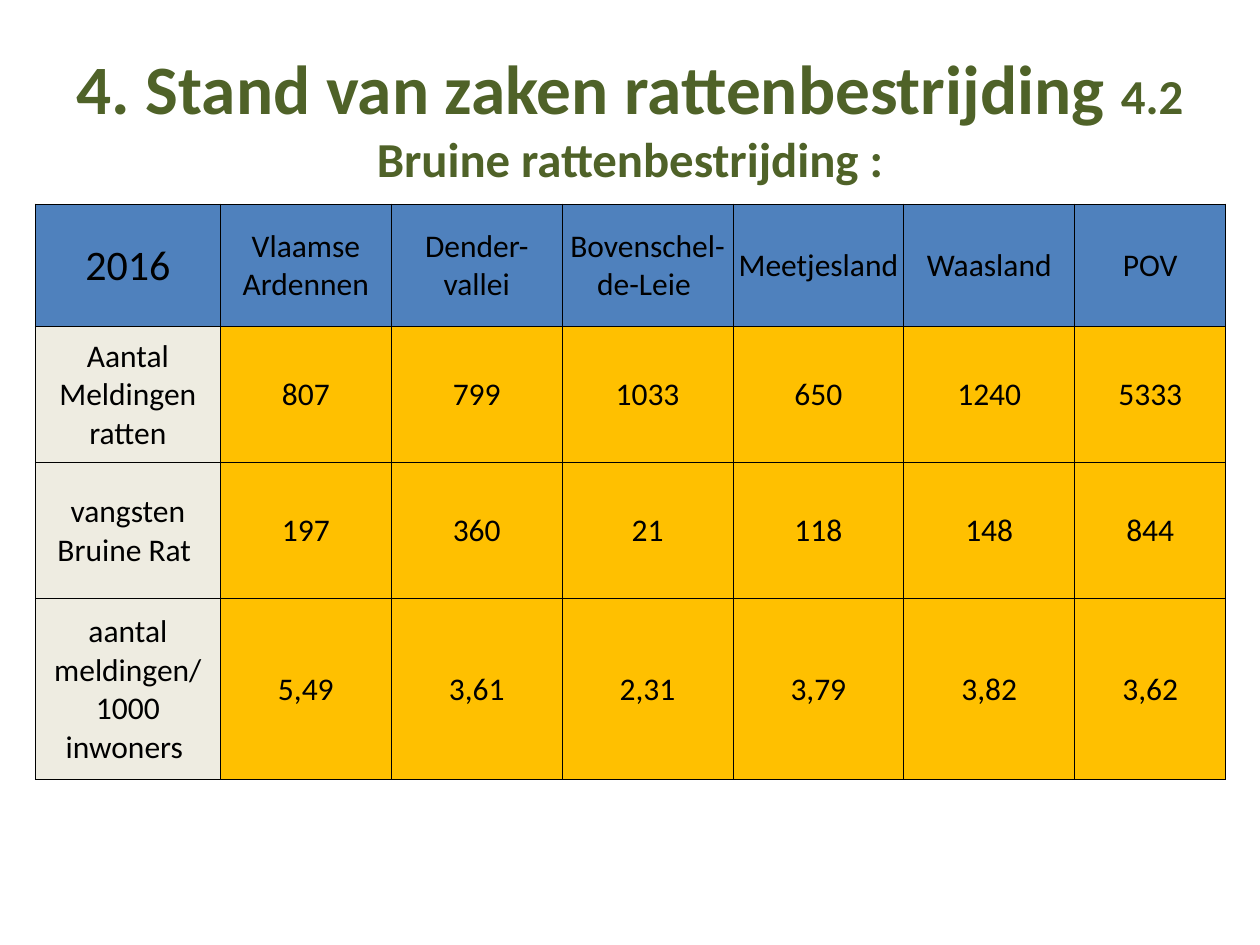
"""Build a slide with a table of the 2016 brown rat control figures."""
from pptx import Presentation
from pptx.dml.color import RGBColor
from pptx.enum.text import MSO_ANCHOR, MSO_AUTO_SIZE, PP_ALIGN
from pptx.oxml import parse_xml
from pptx.oxml.ns import nsdecls
from pptx.util import Inches, Pt

GREEN = RGBColor(0x4F, 0x62, 0x28)
BLACK = RGBColor(0, 0, 0)
BLUE = RGBColor(0x4F, 0x81, 0xBD)
CREAM = RGBColor(0xEE, 0xEC, 0xE1)
AMBER = RGBColor(0xFF, 0xC0, 0x00)

WIDTHS = [1.47] + [1.356] * 5 + [1.2]
HEIGHTS = [0.97, 1.08, 1.08, 1.44]
ROWS = [
    ["2016", "Vlaamse Ardennen", "Dender-vallei", "Bovenschel-de-Leie ",
     "Meetjesland", "Waasland", "POV"],
    ["Aantal Meldingen ratten", "807", "799", "1033", "650", "1240", "5333"],
    ["vangsten Bruine Rat ", "197", "360", "21", "118", "148", "844"],
    ["aantal meldingen/ 1000 inwoners ", "5,49", "3,61", "2,31", "3,79", "3,82", "3,62"],
]


def write(frame, text, size=18, color=BLACK, bold=False):
    para = frame.paragraphs[0]
    para.alignment = PP_ALIGN.CENTER
    run = para.add_run()
    run.text = text
    run.font.name = "Calibri"
    run.font.size = Pt(size)
    run.font.bold = bold
    run.font.color.rgb = color


def border(cell):
    props = cell._tc.get_or_add_tcPr()
    for side in ("lnL", "lnR", "lnT", "lnB"):
        props.append(parse_xml(
            f'<a:{side} {nsdecls("a")} w="{Pt(0.5)}"><a:solidFill>'
            f'<a:srgbClr val="{BLACK}"/></a:solidFill></a:{side}>'))


deck = Presentation()
deck.slide_width, deck.slide_height = Inches(10), Inches(7.5)
slide = deck.slides.add_slide(deck.slide_layouts[5])

title = slide.shapes.title
title.left, title.top = Inches(0.5), Inches(0.3)
title.width, title.height = Inches(9), Inches(1.25)
frame = title.text_frame
frame.word_wrap = True
frame.auto_size = MSO_AUTO_SIZE.NONE
frame.vertical_anchor = MSO_ANCHOR.MIDDLE
frame.margin_left = frame.margin_right = Inches(0.05)
write(frame, "4. Stand van zaken rattenbestrijding ", size=39.6, color=GREEN, bold=True)
write(frame, "4.2 Bruine rattenbestrijding :", size=27.9, color=GREEN, bold=True)

table = slide.shapes.add_table(
    len(ROWS), len(WIDTHS), Inches(0.28), Inches(1.62),
    Inches(sum(WIDTHS)), Inches(sum(HEIGHTS))).table
for col, width in zip(table.columns, WIDTHS):
    col.width = Inches(width)
for row, height in zip(table.rows, HEIGHTS):
    row.height = Inches(height)

for r, texts in enumerate(ROWS):
    for c, text in enumerate(texts):
        cell = table.cell(r, c)
        cell.margin_left = cell.margin_right = cell.margin_top = Inches(0.01)
        cell.margin_bottom = 0
        cell.vertical_anchor = MSO_ANCHOR.MIDDLE
        border(cell)
        cell.fill.solid()
        cell.fill.fore_color.rgb = BLUE if r == 0 else CREAM if c == 0 else AMBER
        write(cell.text_frame, text, size=24 if r == c == 0 else 18)

deck.save("out.pptx")
